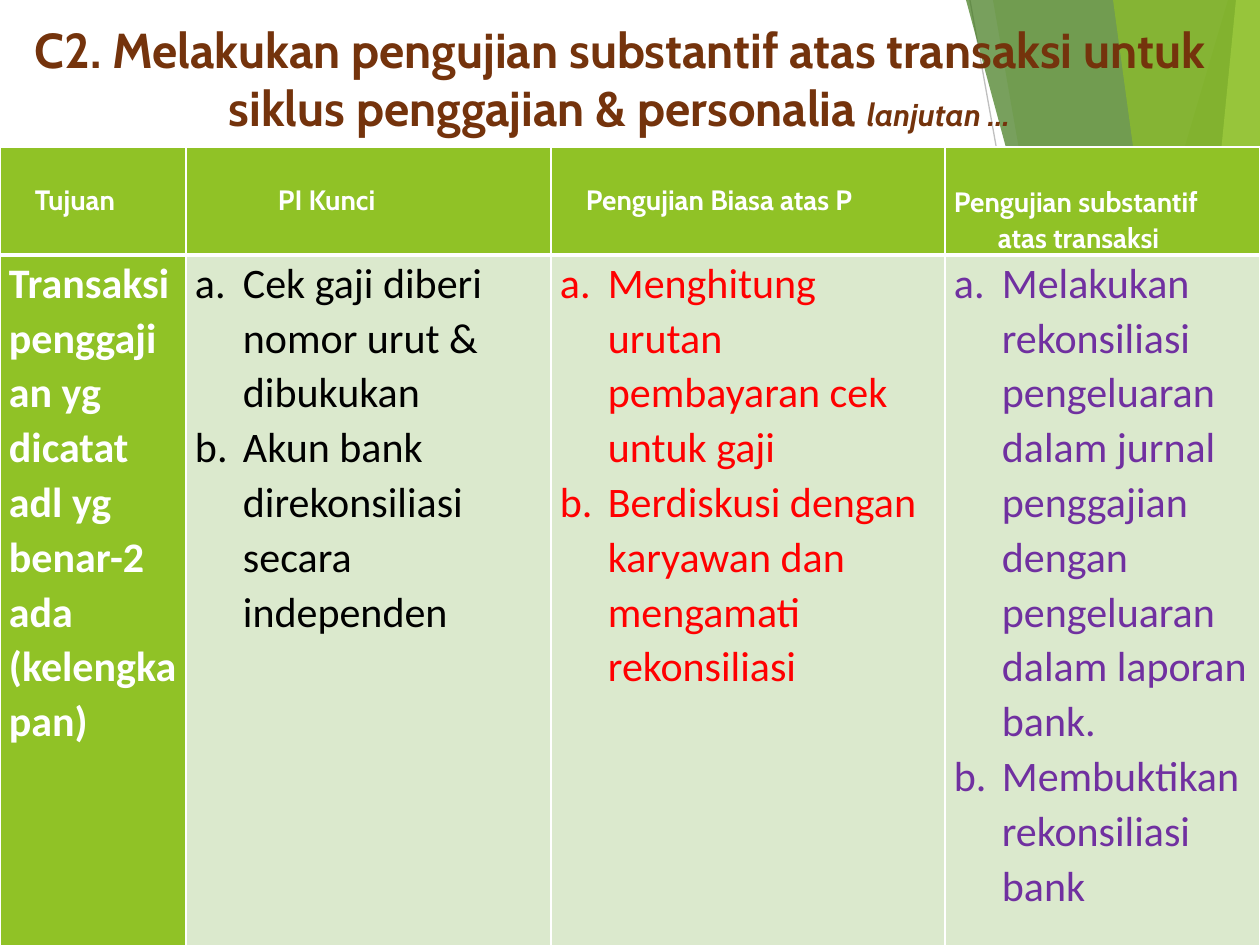
"""Builds the payroll audit test slide with a facet backdrop and a four-column table."""
from dataclasses import dataclass
from typing import Any

from lxml.etree import SubElement
from pptx import Presentation
from pptx.dml.color import RGBColor
from pptx.enum.shapes import MSO_CONNECTOR
from pptx.enum.text import MSO_ANCHOR, PP_ALIGN
from pptx.oxml.ns import qn
from pptx.util import Pt

SCALE = 914400 / 126
WIDTH, HEIGHT = 1260, 945

WHITE = RGBColor(0xFF, 0xFF, 0xFF)
BLACK = RGBColor(0x00, 0x00, 0x00)
RED = RGBColor(0xFF, 0x00, 0x00)
PURPLE = RGBColor(0x70, 0x30, 0xA0)
BROWN = RGBColor(0x74, 0x33, 0x0C)
GREY = RGBColor(0xBF, 0xBF, 0xBF)
GREEN = RGBColor(0x90, 0xC2, 0x26)
DARK_GREEN = RGBColor(0x3F, 0x78, 0x19)
LIME = RGBColor(0xC0, 0xE4, 0x74)
PALE = RGBColor(0xDB, 0xE9, 0xCD)

TITLE = {"name": "Cabin", "size": Pt(28), "bold": True, "italic": False}
SUFFIX = TITLE | {"size": Pt(18), "italic": True}
HEADER = {"name": "Cabin", "size": Pt(16), "bold": True}
LABEL = {"name": "Calibri", "size": Pt(24), "bold": True}
BODY = LABEL | {"bold": False}

FACETS = [
    (1228, 950, GREEN, 30),
    (993, 1158, GREEN, 20),
    (966, 1222, DARK_GREEN, 70),
    (1236, 1143, LIME, 70),
    (1113, 1242, GREEN, 65),
]
COLUMNS = [186, 365, 394, 315]
ROWS = [107, 691]
HEADERS = [
    (34, [("Tujuan", 26)]),
    (34, [("PI Kunci", 83)]),
    (34, [("Pengujian Biasa atas P", 26)]),
    (36, [("Pengujian substantif", 0), ("atas transaksi", 44)]),
]
GOAL = "Transaksi penggajian yg dicatat adl yg benar-2 ada (kelengkapan)"
TESTS = [
    (BLACK, ["Cek gaji diberi nomor urut & dibukukan",
             "Akun bank direkonsiliasi secara independen"]),
    (RED, ["Menghitung urutan pembayaran cek untuk gaji",
           "Berdiskusi dengan karyawan dan mengamati rekonsiliasi"]),
    (PURPLE, ["Melakukan rekonsiliasi pengeluaran dalam jurnal penggajian "
              "dengan pengeluaran dalam laporan bank.",
              "Membuktikan rekonsiliasi bank"]),
]


def emu(px):
    return round(px * SCALE)


@dataclass
class SlideWriter:
    page: Any
    line_spacing: float = 1.07
    list_indent: int = 48
    cell_inset: int = 9

    def facet(self, top_x, bottom_x, color, opacity):
        builder = self.page.shapes.build_freeform(top_x, 0, scale=SCALE)
        builder.add_line_segments([(bottom_x, HEIGHT), (WIDTH, HEIGHT), (WIDTH, 0)])
        shape = builder.convert_to_shape()
        shape.shadow.inherit = False
        shape.line.fill.background()
        shape.fill.solid()
        shape.fill.fore_color.rgb = color
        tint = next(shape.element.spPr.iter(qn("a:srgbClr")))
        SubElement(tint, qn("a:alpha"), val=str(opacity * 1000))

    def line(self, start, end, color, weight):
        points = [emu(value) for value in (*start, *end)]
        connector = self.page.shapes.add_connector(MSO_CONNECTOR.STRAIGHT, *points)
        connector.line.color.rgb = color
        connector.line.width = Pt(weight)
        SubElement(connector.element.spPr, qn("a:effectLst"))

    def span(self, para, text, style, color):
        span = para.add_run()
        span.text = text
        for name, value in style.items():
            setattr(span.font, name, value)
        span.font.color.rgb = color

    def title(self, bounds, spans, color):
        box = self.page.shapes.add_textbox(*map(emu, bounds))
        frame = box.text_frame
        frame.word_wrap = True
        frame.vertical_anchor = MSO_ANCHOR.MIDDLE
        para = frame.paragraphs[0]
        para.alignment = PP_ALIGN.CENTER
        for text, style in spans:
            self.span(para, text, style, color)

    def table(self, bounds, columns, rows):
        table = self.page.shapes.add_table(len(rows), len(columns), *map(emu, bounds)).table
        for column, width in zip(table.columns, columns):
            column.width = emu(width)
        for row, height in zip(table.rows, rows):
            row.height = emu(height)
        return table

    def cell(self, cell, lines, style, color, fill, top=0, numbered=False, bottom_rule=1):
        margins = {"margin_left": self.cell_inset, "margin_right": self.cell_inset,
                   "margin_top": top, "margin_bottom": 0}
        for name, value in margins.items():
            setattr(cell, name, emu(value))
        self.borders(cell, bottom_rule)
        cell.fill.solid()
        cell.fill.fore_color.rgb = fill
        for index, (text, indent) in enumerate(lines):
            frame = cell.text_frame
            para = frame.add_paragraph() if index else frame.paragraphs[0]
            para.line_spacing = self.line_spacing
            self.span(para, text, style, color)
            self.indent(para, indent, numbered)

    def indent(self, para, indent, numbered):
        properties = para._p.get_or_add_pPr()
        properties.set("marL", str(emu(indent)))
        properties.set("indent", str(-emu(indent) if numbered else 0))
        if numbered:
            SubElement(properties, qn("a:buAutoNum"), type="alphaLcPeriod")

    def borders(self, cell, bottom_rule):
        properties = cell._tc.get_or_add_tcPr()
        for side, weight in {"L": 1, "R": 1, "T": 1, "B": bottom_rule}.items():
            edge = SubElement(properties, qn(f"a:ln{side}"), w=str(Pt(weight)))
            fill = SubElement(edge, qn("a:solidFill"))
            SubElement(fill, qn("a:srgbClr"), val=str(WHITE))


def main():
    deck = Presentation()
    deck.slide_width, deck.slide_height = emu(WIDTH), emu(HEIGHT)
    writer = SlideWriter(deck.slides.add_slide(deck.slide_layouts[6]))

    writer.line((970, 0), (1139, HEIGHT), GREY, 0.75)
    for facet in FACETS:
        writer.facet(*facet)

    heading = ("C2. Melakukan pengujian substantif atas transaksi untuk "
               "siklus penggajian & personalia ")
    writer.title((0, 10, 1239, 136), [(heading, TITLE), ("lanjutan ...", SUFFIX)], BROWN)

    table = writer.table((0, 147, WIDTH, sum(ROWS)), COLUMNS, ROWS)
    for column, (top, lines) in enumerate(HEADERS):
        writer.cell(table.cell(0, column), lines, HEADER, WHITE, GREEN, top, bottom_rule=3)
    writer.cell(table.cell(1, 0), [(GOAL, 0)], LABEL, WHITE, GREEN)
    for column, (color, items) in enumerate(TESTS, start=1):
        lines = [(item, writer.list_indent) for item in items]
        writer.cell(table.cell(1, column), lines, BODY, color, PALE, numbered=True)

    deck.save("out.pptx")


if __name__ == "__main__":
    main()
